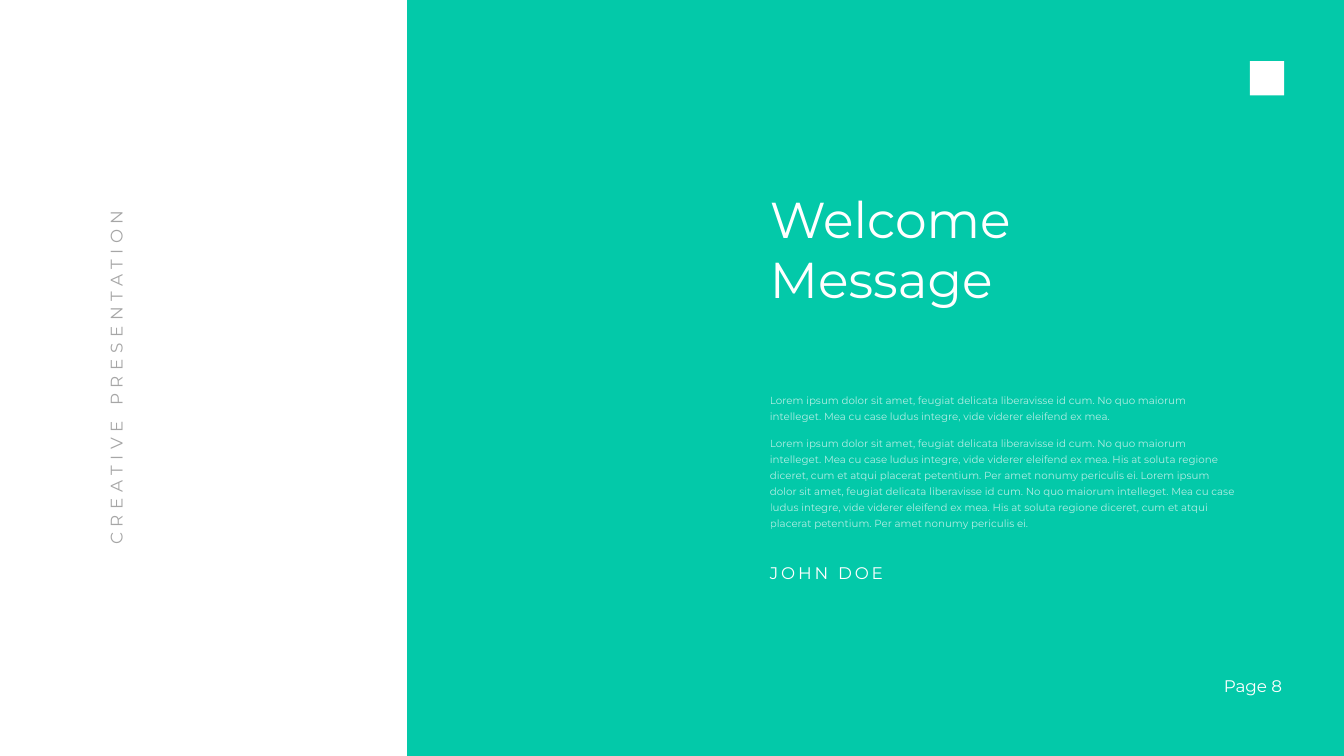
from lxml.etree import SubElement
from pptx import Presentation
from pptx.dml.color import RGBColor
from pptx.enum.shapes import MSO_SHAPE
from pptx.enum.text import MSO_AUTO_SIZE, PP_ALIGN
from pptx.oxml.ns import qn
from pptx.util import Inches, Pt

GREEN = RGBColor(0x03, 0xC9, 0xA9)
WHITE = RGBColor(0xFF, 0xFF, 0xFF)
GRAY = RGBColor(0xA6, 0xA6, 0xA6)
TEXT_LEFT = 11.36

prs = Presentation()
prs.slide_width, prs.slide_height = Inches(20), Inches(11.25)
slide = prs.slides.add_slide(prs.slide_layouts[6])


def add_block(left, top, width, height, color):
    block = slide.shapes.add_shape(
        MSO_SHAPE.RECTANGLE, Inches(left), Inches(top), Inches(width), Inches(height))
    block.shadow.inherit = False
    block.fill.solid()
    block.fill.fore_color.rgb = color
    block.line.fill.background()


def add_text(left, top, width, height, paragraphs, size=18, color=WHITE,
             align=PP_ALIGN.LEFT, before=0, line_spacing=None, tracking=0, opacity=100):
    box = slide.shapes.add_textbox(Inches(left), Inches(top), Inches(width), Inches(height))
    frame = box.text_frame
    frame.word_wrap = True
    frame.auto_size = MSO_AUTO_SIZE.SHAPE_TO_FIT_TEXT
    frame.text = "\n".join(paragraphs)
    for paragraph in frame.paragraphs:
        paragraph.alignment = align
        paragraph.space_before = Pt(before)
        paragraph.line_spacing = line_spacing
        font = paragraph.font
        font.name, font.size = "Montserrat", Pt(size)
        font.color.rgb = color
        # Letter spacing and transparency have no public property
        properties = paragraph.runs[0].font
        properties.color.rgb = color
        run_xml = paragraph.runs[0]._r.get_or_add_rPr()
        if tracking:
            run_xml.set("spc", str(tracking * 100))
        if opacity < 100:
            fill_color = run_xml.find(".//" + qn("a:srgbClr"))
            SubElement(fill_color, qn("a:alpha"), val=str(opacity * 1000))
    return box


# Green panel
add_block(6.06, 0, 13.94, 11.25, GREEN)

# Vertical side label
side_label = add_text(-1.67, 5.42, 6.79, 0.4, ["CREATIVE PRESENTATION"],
                      color=GRAY, align=PP_ALIGN.CENTER, tracking=6)
side_label.rotation = 270

# Welcome message and its author
add_text(TEXT_LEFT, 2.75, 4.21, 1.92, ["Welcome Message"], size=54, before=12)

opening = ("Lorem ipsum dolor sit amet, feugiat delicata liberavisse id cum. "
           "No quo maiorum intelleget. Mea cu case ludus integre, "
           "vide viderer eleifend ex mea.")
closing = ("His at soluta regione diceret, cum et atqui placerat petentium. "
           "Per amet nonumy periculis ei.")
full_message = " ".join([opening, closing] * 2)
add_text(TEXT_LEFT, 5.76, 7.18, 2.19, [opening, full_message],
         size=11, before=12, line_spacing=1.3, opacity=70)

add_text(TEXT_LEFT, 8.33, 4.48, 0.4, ["JOHN DOE"], tracking=3)

# Page number
add_text(17.42, 10.01, 1.76, 0.4, ["Page 8"], align=PP_ALIGN.RIGHT)

# Plain emblem in the corner
add_block(18.6, 0.91, 0.51, 0.51, WHITE)

prs.save("out.pptx")
